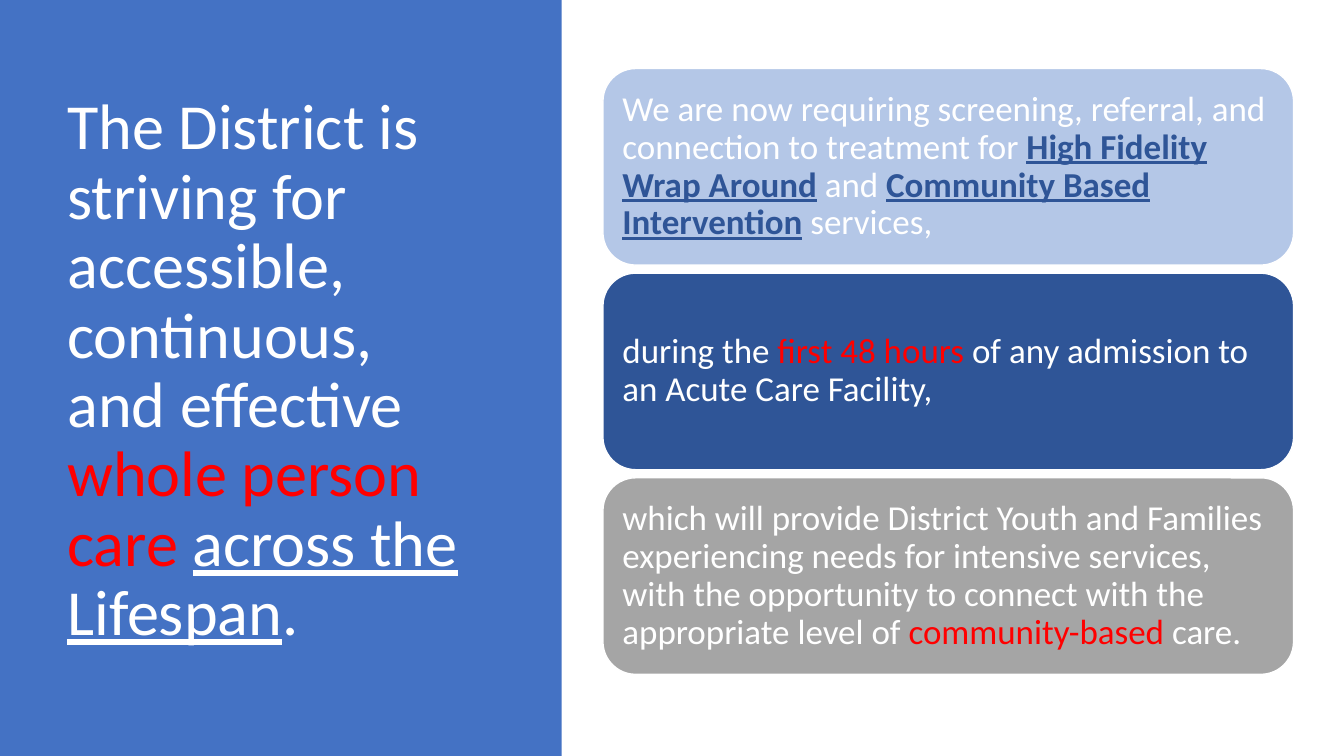
from dataclasses import dataclass

from pptx import Presentation
from pptx.dml.color import RGBColor
from pptx.enum.shapes import MSO_SHAPE
from pptx.enum.text import MSO_ANCHOR, PP_ALIGN
from pptx.util import Inches, Pt

RECT = MSO_SHAPE.RECTANGLE
ROUNDED = MSO_SHAPE.ROUNDED_RECTANGLE
MIDDLE = MSO_ANCHOR.MIDDLE
LEFT = PP_ALIGN.LEFT

SLIDE_W, SLIDE_H = 13.33, 7.5
PANEL_W = 5.57
TITLE_BOX = (0.57, 0.68, 4.16, 6.02)
CARD_LEFT, CARD_TOP, CARD_W, CARD_H = 5.98, 0.68, 6.85, 1.95
CARD_PITCH = CARD_H + 0.08


@dataclass(frozen=True)
class Theme:
    """Colours, font and type sizes of the slide."""

    font: str = "Calibri"
    title_size: float = 45.9
    card_size: float = 25
    white: str = "FFFFFF"
    red: str = "FF0000"
    blue: str = "4472C4"
    pale_blue: str = "B4C7E7"
    deep_blue: str = "2F5597"
    grey: str = "A5A5A5"


THEME = Theme()
PLAIN = {"color": THEME.white}
ALERT = {"color": THEME.red}
UNDERLINED = {"color": THEME.white, "underline": True}
SERVICE = {"color": THEME.deep_blue, "bold": True, "underline": True}

TITLE = [
    ("The District is striving for accessible, continuous, and effective ", PLAIN),
    ("whole person care ", ALERT),
    ("across the Lifespan", UNDERLINED),
    (".", PLAIN),
]
CARDS = [
    (THEME.pale_blue, [
        ("We are now requiring screening, referral, and connection to treatment for ", PLAIN),
        ("High Fidelity Wrap Around", SERVICE),
        (" and ", PLAIN),
        ("Community Based Intervention", SERVICE),
        (" services,", PLAIN),
    ]),
    (THEME.deep_blue, [
        ("during the ", PLAIN),
        ("first 48 hours ", ALERT),
        ("of any admission to an Acute Care Facility,", PLAIN),
    ]),
    (THEME.grey, [
        ("which will provide District Youth and Families experiencing needs for "
         "intensive services, with the opportunity to connect with the "
         "appropriate level of ", PLAIN),
        ("community-based", ALERT),
        (" care.", PLAIN),
    ]),
]


def write_runs(sp, runs, size):
    """Fill a shape with one left-aligned paragraph of styled runs."""
    tf = sp.text_frame
    tf.word_wrap = True
    tf.vertical_anchor = MIDDLE
    tf.margin_left = tf.margin_right = Inches(0.1)
    p = tf.paragraphs[0]
    p.alignment = LEFT
    p.line_spacing = 0.9
    for text, style in runs:
        r = p.add_run()
        r.text = text
        r.font.name = THEME.font
        r.font.size = Pt(size)
        r.font.color.rgb = RGBColor.from_string(style["color"])
        r.font.bold = style.get("bold", False)
        r.font.underline = style.get("underline", False)


def add_block(s, kind, box, fill):
    """Add a filled shape without outline or shadow."""
    sp = s.shapes.add_shape(kind, *map(Inches, box))
    sp.shadow.inherit = False
    sp.fill.solid()
    sp.fill.fore_color.rgb = RGBColor.from_string(fill)
    sp.line.fill.background()
    return sp


def add_title(s, runs):
    """Add the large statement on the side panel."""
    write_runs(s.shapes.add_textbox(*map(Inches, TITLE_BOX)), runs, THEME.title_size)


def add_card(s, row, fill, runs):
    """Add a white-edged rounded card in the given row."""
    box = (CARD_LEFT, CARD_TOP + row * CARD_PITCH, CARD_W, CARD_H)
    sp = add_block(s, ROUNDED, box, fill)
    sp.line.color.rgb = RGBColor.from_string(THEME.white)
    sp.line.width = Pt(1)
    write_runs(sp, runs, THEME.card_size)


def main():
    """Build the slide and save it."""
    prs = Presentation()
    prs.slide_width, prs.slide_height = Inches(SLIDE_W), Inches(SLIDE_H)
    s = prs.slides.add_slide(prs.slide_layouts[6])
    add_block(s, RECT, (0, 0, PANEL_W, SLIDE_H), THEME.blue)
    add_title(s, TITLE)
    for row, (fill, runs) in enumerate(CARDS):
        add_card(s, row, fill, runs)
    prs.save("out.pptx")


if __name__ == "__main__":
    main()
